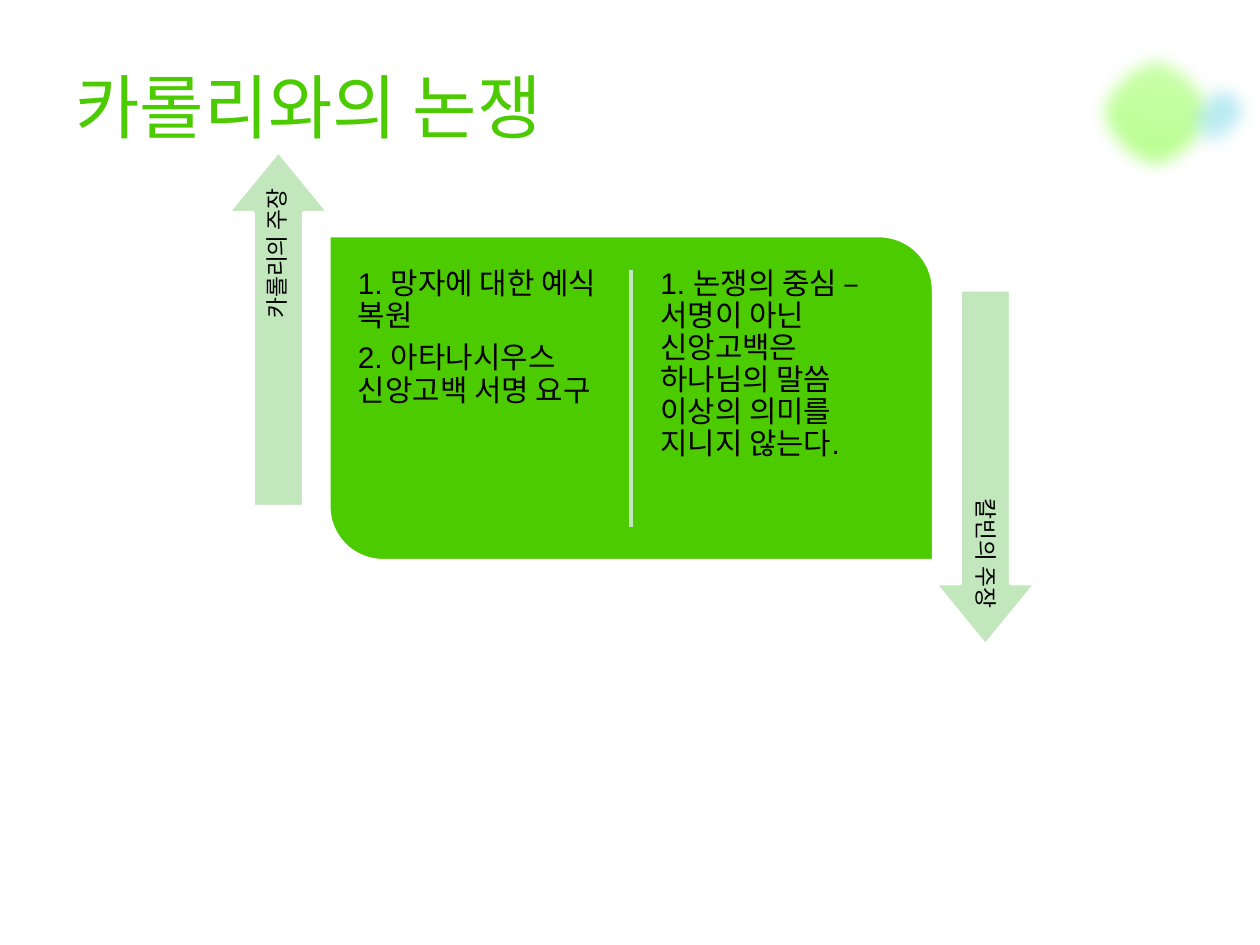
from lxml.etree import SubElement
from pptx import Presentation
from pptx.dml.color import RGBColor
from pptx.enum.shapes import MSO_CONNECTOR, MSO_SHAPE
from pptx.enum.text import MSO_ANCHOR, MSO_AUTO_SIZE, PP_ALIGN
from pptx.oxml.ns import qn
from pptx.util import Inches, Pt

GREEN = RGBColor(0x4C, 0xCB, 0x00)
PALE = RGBColor(0xC2, 0xE7, 0xBD)
WHITE = RGBColor(0xFF, 0xFF, 0xFF)
BLACK = RGBColor(0x00, 0x00, 0x00)
LIME = RGBColor(0xB2, 0xFF, 0x84)
SKY = RGBColor(0x8C, 0xDF, 0xEC)
PALE_SKY = RGBColor(0xB0, 0xE9, 0xF2)

PANEL = (2.61, 1.87, 4.8, 2.58)
CENTER = PANEL[0] + PANEL[2] / 2
COL_W, COL_GAP = 2.08, 0.32
ARROW_W, ARROW_H = 2.82, 0.8


def place(sp, left, top, width, height):
    box = {"left": left, "top": top, "width": width, "height": height}
    for name, value in box.items():
        setattr(sp, name, Inches(value))


def write(tf, lines, size, color, font, inset=None, **paragraph_format):
    """Fill a text frame, one paragraph per line."""
    tf.word_wrap = True
    tf.auto_size = MSO_AUTO_SIZE.NONE
    if inset is not None:
        for side in ("left", "right", "top", "bottom"):
            setattr(tf, f"margin_{side}", Inches(inset))
    for i, line in enumerate(lines):
        p = tf.paragraphs[0] if i == 0 else tf.add_paragraph()
        for name, value in paragraph_format.items():
            setattr(p, name, value)
        r = p.add_run()
        r.text = line
        r.font.size, r.font.name = Pt(size), font
        r.font.color.rgb = color


def add_block(s, shape, box, fill, adjustments, rotation=0):
    """Add a filled shape with a white outline."""
    sp = s.shapes.add_shape(shape, *map(Inches, box))
    sp.shadow.inherit = False
    sp.fill.solid()
    sp.fill.fore_color.rgb = fill
    sp.line.color.rgb = WHITE
    sp.line.width = Pt(2)
    for i, value in enumerate(adjustments):
        sp.adjustments[i] = value
    sp.rotation = rotation
    return sp


def add_blob(s, box, rotation, start, end, opacity):
    """Add a soft-edged oval with a fading gradient."""
    sp = s.shapes.add_shape(MSO_SHAPE.OVAL, *map(Inches, box))
    sp.rotation = rotation
    sp.line.fill.background()
    sp.fill.gradient()
    sp.fill.gradient_angle = 270
    for stop, color in zip(sp.fill.gradient_stops, (start, end)):
        stop.color.rgb = color
    colors = list(sp.element.spPr.iter(qn("a:srgbClr")))
    SubElement(colors[-1], qn("a:alpha"), val=str(opacity * 1000))
    effects = SubElement(sp.element.spPr, qn("a:effectLst"))
    SubElement(effects, qn("a:softEdge"), rad=str(Pt(10)))


def add_claims(s, ph, left, lines):
    """Write a list in a body placeholder, in front of the panel."""
    s.shapes.element.append(ph.element)
    place(ph, left, 2.06, COL_W, 2.19)
    write(ph.text_frame, lines, 17, BLACK, "Arial", 0.07,
          line_spacing=0.9, space_before=Pt(0), space_after=Pt(6))
    for p in ph.text_frame.paragraphs:
        pPr = p._p.get_or_add_pPr()
        pPr.set("marL", "0")
        pPr.set("indent", "0")
        SubElement(pPr, qn("a:buNone"))


def add_arrow(s, center_x, center_y, rotation, label):
    box = (center_x - ARROW_W / 2, center_y - ARROW_H / 2, ARROW_W, ARROW_H)
    sp = add_block(s, MSO_SHAPE.RIGHT_ARROW, box, PALE, (0.5, 0.61), rotation)
    sp.text_frame.vertical_anchor = MSO_ANCHOR.MIDDLE
    write(sp.text_frame, [label], 13, BLACK, "Arial", 0.05,
          alignment=PP_ALIGN.RIGHT, line_spacing=0.9)


def add_divider(s):
    line = s.shapes.add_connector(
        MSO_CONNECTOR.STRAIGHT,
        *map(Inches, (CENTER, 2.14, CENTER, 4.18)))
    line.line.color.rgb = PALE
    line.line.width = Pt(2)
    SubElement(line.element.spPr, qn("a:effectLst"))


def main():
    prs = Presentation()
    prs.slide_width, prs.slide_height = Inches(10), Inches(7.5)
    s = prs.slides.add_slide(prs.slide_layouts[3])
    title, left_list, right_list = s.placeholders

    # Corner decoration
    add_blob(s, (8.61, 0.33, 1.13, 1.13), 192.5, LIME, LIME, 58)
    add_blob(s, (9.33, 0.54, 0.67, 0.77), 34.8, SKY, PALE_SKY, 36)

    # Title
    place(title, 0.5, 0.33, 9, 1.01)
    title.text_frame.vertical_anchor = MSO_ANCHOR.MIDDLE
    write(title.text_frame, ["카롤리와의 논쟁"], 40, GREEN, "DejaVu Sans",
          alignment=PP_ALIGN.LEFT)

    # Panel with the two positions
    add_block(s, MSO_SHAPE.ROUND_2_DIAG_RECTANGLE, PANEL, GREEN, (0, 0.167))
    add_divider(s)
    add_claims(s, left_list, CENTER - COL_GAP / 2 - COL_W,
               ["1. 망자에 대한 예식 복원", "2. 아타나시우스 신앙고백 서명 요구"])
    add_claims(s, right_list, CENTER + COL_GAP / 2,
               ["1. 논쟁의 중심 – 서명이 아닌 신앙고백은 하나님의 말씀 "
                "이상의 의미를 지니지 않는다."])

    # Opposing arrows
    add_arrow(s, 2.21, 2.61, 270, "카롤리의 주장")
    add_arrow(s, 7.82, 3.71, 90, "칼빈의 주장")

    prs.save("out.pptx")


if __name__ == "__main__":
    main()
